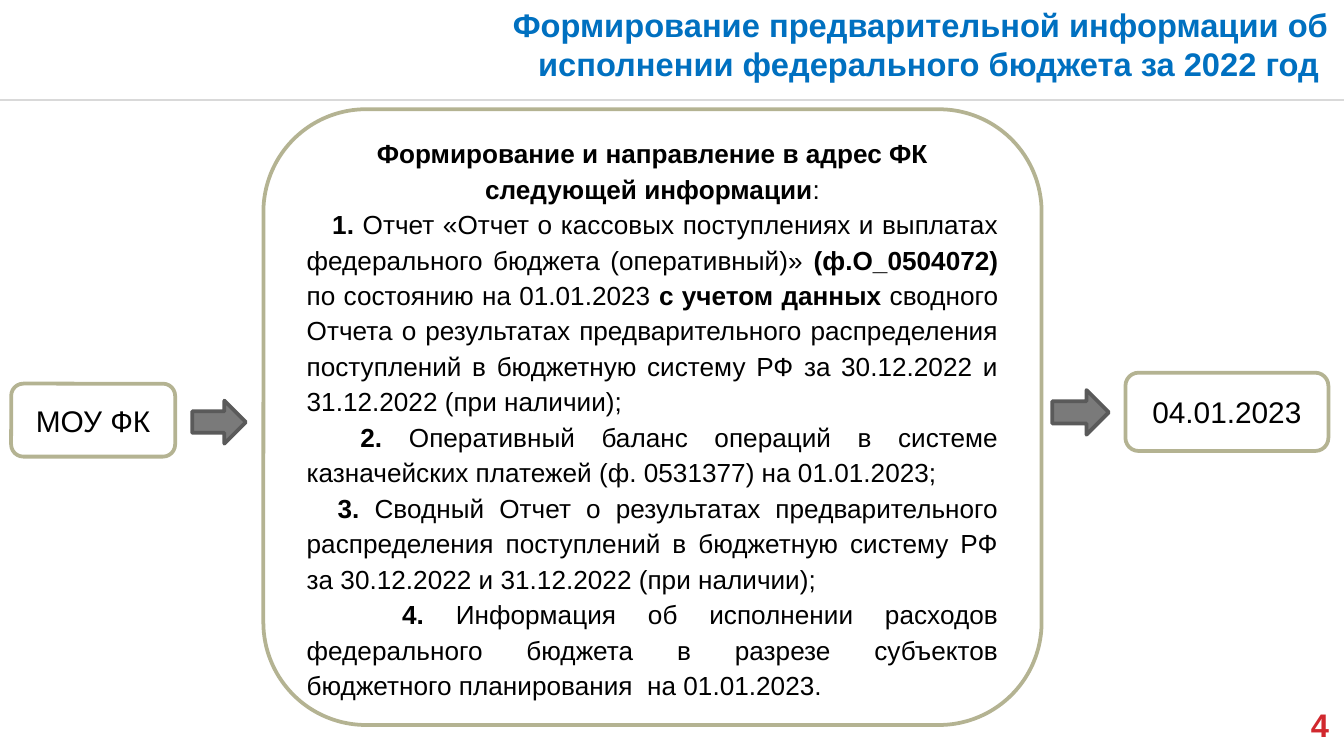
from dataclasses import dataclass

import pptx
import pptx.dml.color
import pptx.enum.shapes
import pptx.enum.text
import pptx.oxml.ns
import pptx.util
import lxml.etree

SLIDE_WIDTH = 10
SLIDE_HEIGHT = SLIDE_WIDTH * 9 / 16
FONT = "Arial"
BLACK, WHITE, BLUE, RED = "000000", "FFFFFF", "0070C0", "D1282E"
OLIVE, GREY, DARK_GREY, RULE_GREY = "B4B392", "7A7A7A", "5A5A5A", "D9D9D9"
ALIGN = pptx.enum.text.PP_ALIGN
ANCHOR = pptx.enum.text.MSO_ANCHOR
SHAPE = pptx.enum.shapes.MSO_SHAPE


@dataclass(frozen=True)
class Area:
    """A rectangle given as percentages of the slide's size."""
    left: float
    top: float
    width: float
    height: float

    def lengths(self) -> list:
        """Return left, top, width and height as lengths."""
        sides = (SLIDE_WIDTH, SLIDE_HEIGHT) * 2
        shares = (self.left, self.top, self.width, self.height)
        return [pptx.util.Inches(share * side / 100) for share, side in zip(shares, sides)]


@dataclass(frozen=True)
class Run:
    """A stretch of text of one weight."""
    text: str
    bold: bool = False


@dataclass(frozen=True)
class Paragraph:
    """Runs sharing an alignment, line spacing and first-line indent in inches."""
    runs: tuple
    align: ALIGN = ALIGN.CENTER
    spacing: float = 1.0
    indent: float = 0


@dataclass(frozen=True)
class Step:
    """A rounded box of the process."""
    area: Area
    size: float
    paragraphs: tuple


def color(value: str) -> pptx.dml.color.RGBColor:
    """Turn a hex string into a colour."""
    return pptx.dml.color.RGBColor.from_string(value)


def write(frame, paragraphs: tuple, size: float, ink: str) -> None:
    """Fill a text frame run by run."""
    frame.word_wrap = True
    for index, content in enumerate(paragraphs):
        paragraph = frame.add_paragraph() if index else frame.paragraphs[0]
        paragraph.alignment = content.align
        paragraph.line_spacing = content.spacing
        if content.indent:
            properties = paragraph._p.get_or_add_pPr()
            properties.set("marL", "0")
            properties.set("indent", str(pptx.util.Inches(content.indent)))
        for part in content.runs:
            run = paragraph.add_run()
            run.text = part.text
            run.font.name = FONT
            run.font.size = pptx.util.Pt(size)
            run.font.bold = part.bold
            run.font.color.rgb = color(ink)


def write_flush(holder, area: Area, text: str, ink: str) -> None:
    """Place a right-aligned bold heading without insets."""
    holder.left, holder.top, holder.width, holder.height = area.lengths()
    frame = holder.text_frame
    frame.margin_left = frame.margin_right = frame.margin_top = frame.margin_bottom = 0
    frame.vertical_anchor = ANCHOR.TOP
    frame.auto_size = pptx.enum.text.MSO_AUTO_SIZE.NONE
    write(frame, (Paragraph((Run(text, True),), ALIGN.RIGHT),), 17.5, ink)


def draw_shape(slide, kind: SHAPE, area: Area, fill: str, line: str):
    """Add a flat filled and outlined shape."""
    shape = slide.shapes.add_shape(kind, *area.lengths())
    shape.shadow.inherit = False
    shape.fill.solid()
    shape.fill.fore_color.rgb = color(fill)
    shape.line.color.rgb = color(line)
    shape.line.width = pptx.util.Pt(2)
    return shape


def draw_step(slide, step: Step) -> None:
    """Add a rounded box with its text."""
    box = draw_shape(slide, SHAPE.ROUNDED_RECTANGLE, step.area, WHITE, OLIVE)
    box.text_frame.vertical_anchor = ANCHOR.MIDDLE
    write(box.text_frame, step.paragraphs, step.size, BLACK)


def draw_rule(slide, top_share: float) -> None:
    """Add the full-width line under the title."""
    left, top, width, _ = Area(0, top_share, 100, 0).lengths()
    rule = slide.shapes.add_connector(
        pptx.enum.shapes.MSO_CONNECTOR.STRAIGHT, left, top, left + width, top)
    rule.line.color.rgb = color(RULE_GREY)
    rule.line.width = pptx.util.Pt(1)
    lxml.etree.SubElement(rule._element.spPr, pptx.oxml.ns.qn("a:effectLst"))


def report_item(number: int, indent: float, *runs: Run) -> Paragraph:
    """Make a justified, numbered paragraph of the report list."""
    return Paragraph((Run(f"{number}. ", True), *runs), ALIGN.JUSTIFY, 1.13, indent)


REPORTS = (
    Paragraph((Run("Формирование и направление в адрес ФК следующей информации", True),
               Run(":")), spacing=1.13),
    report_item(
        1, 0.19,
        Run("Отчет «Отчет о кассовых поступлениях и выплатах федерального бюджета "
            "(оперативный)» "),
        Run("(ф.О_0504072) ", True),
        Run("по состоянию на 01.01.2023 "),
        Run("с учетом данных ", True),
        Run("сводного Отчета о результатах предварительного распределения поступлений "
            "в бюджетную систему РФ за 30.12.2022 и 31.12.2022 (при наличии);")),
    report_item(
        2, 0.4,
        Run("Оперативный баланс операций в системе казначейских платежей "
            "(ф. 0531377) на 01.01.2023;")),
    report_item(
        3, 0.23,
        Run("Сводный Отчет о результатах предварительного распределения поступлений "
            "в бюджетную систему РФ за 30.12.2022 и 31.12.2022 (при наличии);")),
    report_item(
        4, 0.71,
        Run("Информация об исполнении расходов федерального бюджета в разрезе "
            "субъектов бюджетного планирования  на 01.01.2023.")),
)
STEPS = (
    Step(Area(19.6, 14.45, 57.9, 81.45), 14, REPORTS),
    Step(Area(0.83, 50.75, 12.2, 9.65), 16, (Paragraph((Run("МОУ ФК"),)),)),
    Step(Area(83.74, 49.3, 15.1, 10.35), 16, (Paragraph((Run("04.01.2023"),)),)),
)
ARROWS = (Area(14.3, 53, 4, 5.7), Area(78.3, 51.6, 4.2, 5.9))


def main() -> None:
    """Build and save the slide."""
    deck = pptx.Presentation()
    deck.slide_width = pptx.util.Inches(SLIDE_WIDTH)
    deck.slide_height = pptx.util.Inches(SLIDE_HEIGHT)
    slide = deck.slides.add_slide(deck.slide_layouts[5])
    draw_rule(slide, 13.2)
    write_flush(slide.shapes.title, Area(25.8, 0.65, 73.1, 15.7),
                "Формирование предварительной информации об исполнении "
                "федерального бюджета за 2022 год ", BLUE)
    page_area = Area(75.9, 93.2, 23, 5.2)
    write_flush(slide.shapes.add_textbox(*page_area.lengths()), page_area, "4", RED)
    for step in STEPS:
        draw_step(slide, step)
    for arrow in ARROWS:
        draw_shape(slide, SHAPE.RIGHT_ARROW, arrow, GREY, DARK_GREY)
    deck.save("out.pptx")


if __name__ == "__main__":
    main()
